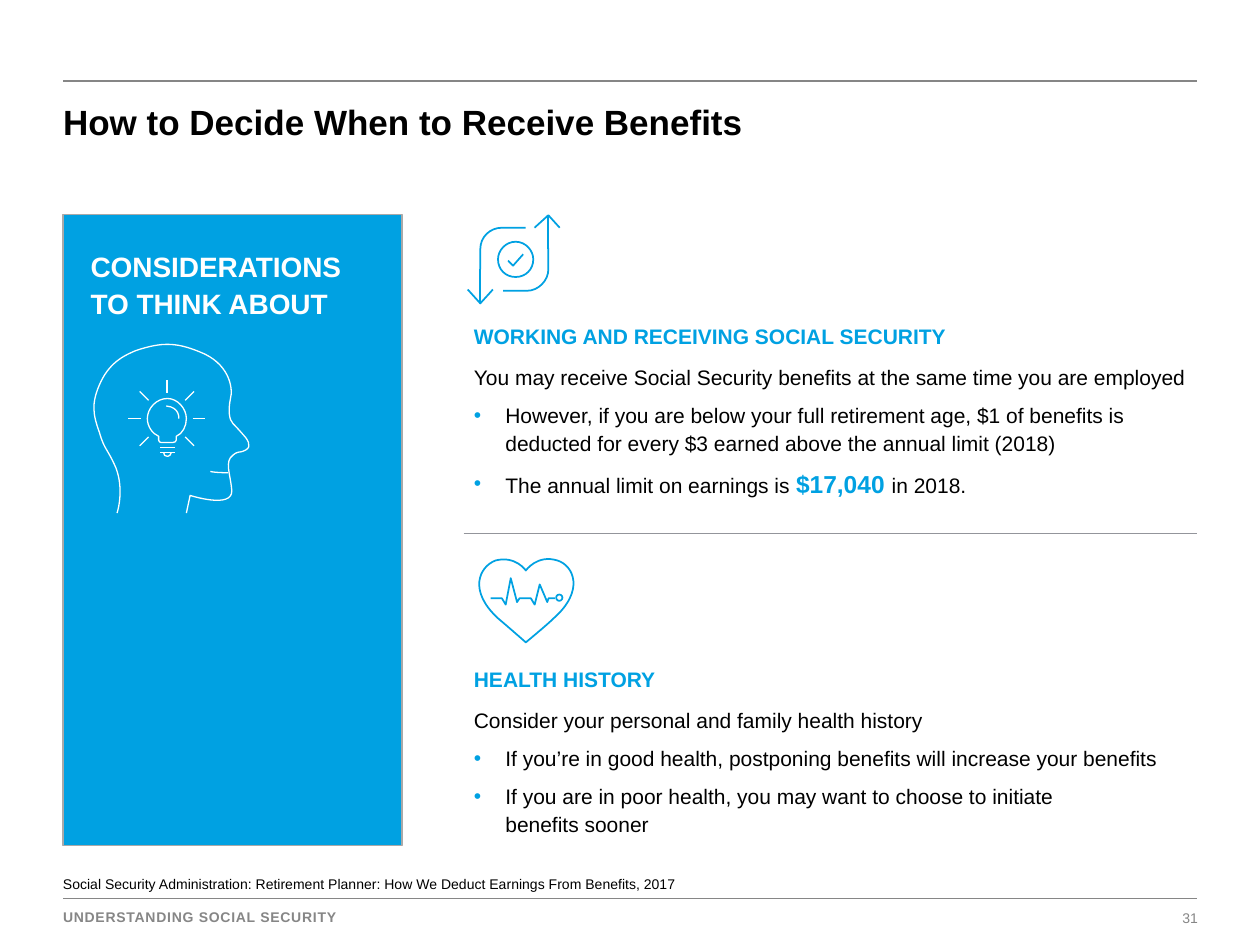
import math

from lxml import etree
from pptx import Presentation
from pptx.dml.color import RGBColor
from pptx.enum.shapes import MSO_CONNECTOR, MSO_SHAPE
from pptx.enum.text import MSO_ANCHOR, PP_ALIGN
from pptx.oxml.ns import qn
from pptx.util import Pt

STRAIGHT = MSO_CONNECTOR.STRAIGHT
RECTANGLE, OVAL = MSO_SHAPE.RECTANGLE, MSO_SHAPE.OVAL
TOP, BOTTOM = MSO_ANCHOR.TOP, MSO_ANCHOR.BOTTOM
LEFT, RIGHT = PP_ALIGN.LEFT, PP_ALIGN.RIGHT

BLUE, WHITE, BLACK, GRAY = "00A1E2", "FFFFFF", "000000", "868686"
NO_BREAK_SPACE = chr(160)
GRID = 0.72  # points per unit of the icon outlines

HEAD = """M 109 104 C 109 104 99 104 95 103 M 21 136 C 21 136 27 118 20 100
    C 13 84 11 86 7 72 C 2 58 0 49 8 32 C 16 15 29 10 36 7 C 57 0 69 0 91 10
    C 111 20 113 38 111 45 C 109 55 110 62 113 65 C 117 69 123 76 123 76
    C 123 76 129 83 123 86 C 117 89 118 86 113 90 C 106 95 111 105 112 118
    C 113 133 79 122 79 122 C 76 136 76 136 76 136"""
BULB = """M 54 75 L 54 78 C 54 79 55 80 56 80 L 65 80 C 67 80 68 79 68 78 L 68 75
    C 73 73 76 67 76 61 C 76 53 69 45 61 45 C 52 45 45 53 45 61 C 45 67 49 73 54 75"""
BULB_CAP = "M 58 88 C 58 90 59 91 61 91 C 62 91 64 90 64 88"
BULB_GLINT = "M 70 61 C 70 61 71 52 60 51"
ARROWS = """M 64 0 L 64 27 M 73 10 L 64 0 L 53 10 M 64 26 L 64 43
    C 64 52 56 60 47 60 L 28 60 M 10 70 L 10 43 M 0 59 L 10 70 L 20 59
    M 10 43 L 10 27 C 10 17 18 10 27 10 L 46 10"""
CHECK_MARK = """M 32 36 L 36 40 L 44 31 M 52 35 C 52 43 46 49 38 49
    C 30 49 24 43 24 35 C 24 28 30 21 38 21 C 46 21 52 28 52 35"""
HEART = """M 46 70 C 46 70 63 56 68 51 C 93 29 84 9 71 5 C 55 0 46 13 46 13
    C 46 13 38 1 22 5 C 9 10 0 29 24 51 C 30 56 46 70 46 70"""
PULSE = """M 18 35 L 27 35 L 30 40 L 34 19 L 39 38 L 41 35 L 50 35 L 53 40
    L 57 24 L 63 38 L 64 35 L 69 35"""


def color(value):
    return RGBColor.from_string(value)


def set_font(font, size, value, bold=False):
    font.name, font.size, font.bold = "Arial", Pt(size), bold
    font.color.rgb = color(value)


def set_outline(shape, value, width):
    shape.shadow.inherit = False
    shape.fill.background()
    shape.line.color.rgb = color(value)
    shape.line.width = Pt(width)


def add_line(shapes, start, end, value, width):
    line = shapes.add_connector(STRAIGHT, *map(Pt, (*start, *end)))
    line.line.color.rgb = color(value)
    line.line.width = Pt(width)
    etree.SubElement(line._element.spPr, qn("a:effectLst"))


def set_frame(frame, margins=(0, 0, 0, 0), wrap=True, anchor=TOP):
    frame.margin_left, frame.margin_top, frame.margin_right, frame.margin_bottom = map(Pt, margins)
    frame.word_wrap = wrap
    frame.vertical_anchor = anchor


def add_text(shapes, box, text, size, value, bold=False, align=LEFT, spacing=None, **layout):
    frame = shapes.add_textbox(*map(Pt, box)).text_frame
    set_frame(frame, **layout)
    para = frame.paragraphs[0]
    para.text = text
    para.alignment = align
    para.line_spacing = spacing
    set_font(para.font, size, value, bold)
    return para


def read_commands(outline):
    """Yield each M, L or C command with its points."""
    words = iter(outline.split())
    for command in words:
        count = 3 if command == "C" else 1
        yield command, [(float(next(words)), float(next(words))) for _ in range(count)]


def add_outline(shapes, origin, outline, value, width):
    """Lay out every point as a corner, then join each control triple into one curve."""
    commands = [(command, [(Pt(origin[0] + x * GRID), Pt(origin[1] + y * GRID)) for x, y in points])
                for command, points in read_commands(outline)]
    builder = shapes.build_freeform(*commands[0][1][0])
    for command, points in commands[1:]:
        if command == "M":
            builder.move_to(*points[0])
        else:
            builder.add_line_segments(points, close=False)
    shape = builder.convert_to_shape()
    set_outline(shape, value, width)
    steps = iter(list(shape._element.find(".//" + qn("a:path"))))
    for command, points in commands:
        corners = [next(steps) for _ in points]
        if command == "C":
            corners[0].tag = qn("a:cubicBezTo")
            for corner in corners[1:]:
                corners[0].append(corner[0])
                corner.getparent().remove(corner)


def add_head_icon(page, origin):
    shapes = page.shapes.add_group_shape().shapes
    for outline in (HEAD, BULB, BULB_CAP, BULB_GLINT):
        add_outline(shapes, origin, outline, WHITE, 0.75)

    def at(x, y):
        return origin[0] + x * GRID, origin[1] + y * GRID

    for angle in range(135, 406, 45):
        dx, dy = math.cos(math.radians(angle)), math.sin(math.radians(angle))
        inner, outer = (at(60.5 + radius * dx, 61 + radius * dy) for radius in (20.5, 30.5))
        add_line(shapes, inner, outer, WHITE, 0.75)
    for y in (84, 88):
        add_line(shapes, at(67, y), at(55, y), WHITE, 0.75)


def add_arrows_icon(page, origin):
    shapes = page.shapes.add_group_shape().shapes
    for outline in (ARROWS, CHECK_MARK):
        add_outline(shapes, origin, outline, BLUE, 1)


def add_heart_icon(page, origin):
    shapes = page.shapes.add_group_shape().shapes
    add_outline(shapes, origin, PULSE, BLUE, 1)
    box = (origin[0] + 70 * GRID, origin[1] + 32 * GRID, 5 * GRID, 5 * GRID)
    set_outline(shapes.add_shape(OVAL, *map(Pt, box)), BLUE, 1)
    add_outline(shapes, origin, HEART, BLUE, 1)


def add_panel(page, box):
    left, top, width, height = box
    panel = page.shapes.add_shape(RECTANGLE, *map(Pt, box))
    set_outline(panel, "A9A9A9", 0.75)
    panel.fill.solid()
    panel.fill.fore_color.rgb = color(BLUE)
    add_text(page.shapes, (left + 15.8, top + 18.4, width - 32, 61),
             "CONSIDERATIONS \vTO THINK ABOUT", 16, WHITE, bold=True, spacing=1.1)
    add_head_icon(page, (left + 15.8, top + 72.9))


def add_bullet(para):
    properties = para._p.get_or_add_pPr()
    properties.set("marL", str(Pt(18)))
    properties.set("indent", str(-Pt(18)))
    bullet_color = etree.SubElement(properties, qn("a:buClr"))
    etree.SubElement(bullet_color, qn("a:srgbClr"), val=BLUE)
    etree.SubElement(properties, qn("a:buFont"), typeface="Arial")
    etree.SubElement(properties, qn("a:buChar"), char="•")


def add_section(page, box, heading, lead, bullets):
    """Each bullet is a list of spans; every second span is emphasised."""
    first = add_text(page.shapes, box, heading, 12, BLUE, bold=True, spacing=1.2,
                     margins=(3.6, 0, 3.6, 3.6))
    frame = first._parent
    for index, spans in enumerate([[lead], *bullets]):
        para = frame.add_paragraph()
        if index:
            add_bullet(para)
        para.line_spacing = 1.1 if index else 1.2
        para.space_before = Pt(6)
        set_font(para.font, 12, BLACK)
        for number, text in enumerate(spans):
            span = para.add_run()
            span.text = text
            if number % 2:
                set_font(span.font, 14, BLUE, bold=True)


def add_title(page, box, text):
    title = page.shapes.title
    title.left, title.top, title.width, title.height = map(Pt, box)
    set_frame(title.text_frame)
    para = title.text_frame.paragraphs[0]
    para.text = text
    para.alignment = LEFT
    set_font(para.font, 20, BLACK, bold=True)


def add_footer(page, box):
    left, top, width, _ = box
    add_text(page.shapes, (left, top - 25.2, width, 23),
             "Social Security Administration: Retirement Planner: How We Deduct Earnings From Benefits, 2017",
             8, BLACK, spacing=0.9, margins=(0, 0, 0, 1.44), anchor=BOTTOM)
    add_line(page.shapes, (left, top), (left + width, top), GRAY, 1)
    para = add_text(page.shapes, (left, top + 5.8, 223, 10.8), "UNDERSTANDING SOCIAL SECURITY",
                    8, GRAY, bold=True, wrap=False)
    para.runs[0]._r.get_or_add_rPr().set("spc", "40")
    add_text(page.shapes, (left + width - 9.4, top + 6.5, 10, 9.4), "31", 8, GRAY,
             align=RIGHT, wrap=False)


def main():
    deck = Presentation()
    deck.slide_width, deck.slide_height = Pt(720), Pt(540)
    page = deck.slides.add_slide(deck.slide_layouts[5])
    add_line(page.shapes, (36, 46.2), (684, 46.2), GRAY, 1)
    add_title(page, (36, 57.6, 647.3, 24.5), "How to Decide When to Receive Benefits")
    add_panel(page, (36, 122.4, 193.7, 360.9))
    add_arrows_icon(page, (267.3, 123))
    add_section(page, (267.2, 182, 417, 111.6), "WORKING AND RECEIVING SOCIAL SECURITY",
                "You may receive Social Security benefits at the same time you are employed",
                [["However, if you are below your full retirement age, $1 of benefits is "
                  "deducted for every $3 earned above the annual limit (2018)"],
                 ["The annual limit on earnings is ", "$17,040 ", "in 2018."]])
    add_heart_icon(page, (267.4, 316.7))
    add_section(page, (267.2, 378, 417, 111.6), "HEALTH HISTORY",
                "Consider your personal and family health history",
                [["If you’re in good health, postponing benefits will increase your benefits"],
                 ["If you are in poor health, you may want to choose to initiate "
                  f"benefits{NO_BREAK_SPACE}sooner"]])
    add_line(page.shapes, (265, 305), (684, 305), "93959B", 0.5)
    add_footer(page, (36, 513.4, 648, 20))
    deck.save("out.pptx")


if __name__ == "__main__":
    main()
